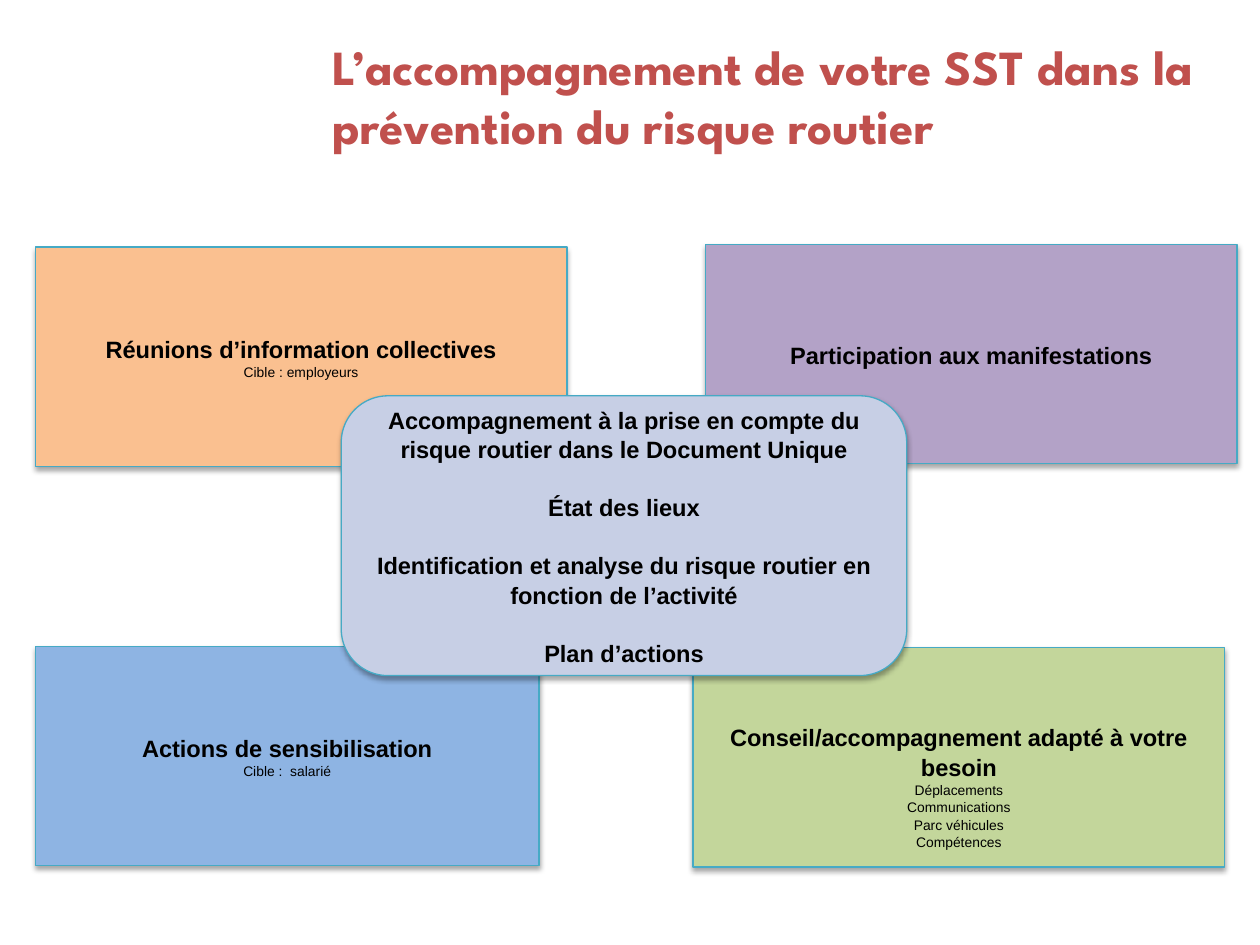
from lxml.etree import SubElement
from pptx import Presentation
from pptx.dml.color import RGBColor as Rgb
from pptx.enum.shapes import MSO_SHAPE as Shape
from pptx.enum.text import MSO_ANCHOR as Anchor, PP_ALIGN as Align
from pptx.oxml.ns import qn
from pptx.util import Cm, Pt

COLORS = {
    "title": "C0504D",
    "text": "000000",
    "border": "46AAC5",
    "meetings": "FAC090",
    "events": "B3A2C7",
    "awareness": "8EB4E3",
    "advice": "C3D69B",
    "support": "C7CFE5",
}


def write(frame, text, *, size, first=False, bold=False, color="text",
          font="Arial", align=Align.CENTER, before=0, spacing=1.05):
    """Write one formatted paragraph into a text frame."""
    paragraph = frame.paragraphs[0] if first else frame.add_paragraph()
    paragraph.alignment = align
    paragraph.line_spacing = spacing
    if before:
        paragraph.space_before = Pt(before)
    run = paragraph.add_run()
    run.text = text
    run.font.name = font
    run.font.size = Pt(size)
    run.font.bold = bold
    run.font.color.rgb = Rgb.from_string(COLORS[color])


class Deck:
    """Hold the style and the current slide."""

    heading_size = 13.5
    detail_size = 7.9
    title_font = "League Spartan"

    def __init__(self):
        self.presentation = Presentation()
        self.presentation.slide_width = Cm(25.4)
        self.presentation.slide_height = Cm(19.05)
        self.slide = self.presentation.slides.add_slide(
            self.presentation.slide_layouts[6])

    def title(self, text, left, top, width, height):
        box = self.slide.shapes.add_textbox(
            Cm(left), Cm(top), Cm(width), Cm(height))
        frame = box.text_frame
        frame.word_wrap = True
        frame.vertical_anchor = Anchor.MIDDLE
        frame.margin_left = frame.margin_right = 0
        frame.margin_top = frame.margin_bottom = 0
        write(frame, text, size=28, first=True, bold=True, color="title",
              font=self.title_font, align=Align.LEFT, spacing=1)

    def shadow(self, panel):
        panel.shadow.inherit = False
        effects = panel._element.spPr.find(qn("a:effectLst"))
        outer = SubElement(effects, qn("a:outerShdw"), blurRad=str(Pt(3.1)),
                           dist=str(Pt(1.8)), dir="5400000", rotWithShape="0")
        tint = SubElement(outer, qn("a:srgbClr"), val="000000")
        SubElement(tint, qn("a:alpha"), val="35000")

    def panel(self, color, left, top, width, height, headings, details=(),
              shape=Shape.RECTANGLE, gap=0, top_inset=0.13):
        panel = self.slide.shapes.add_shape(
            shape, Cm(left), Cm(top), Cm(width), Cm(height))
        panel.fill.solid()
        panel.fill.fore_color.rgb = Rgb.from_string(COLORS[color])
        panel.line.color.rgb = Rgb.from_string(COLORS["border"])
        panel.line.width = Pt(0.75)
        self.shadow(panel)
        frame = panel.text_frame
        frame.word_wrap = True
        frame.vertical_anchor = Anchor.MIDDLE
        frame.margin_top = Cm(top_inset)
        for index, heading in enumerate(headings):
            write(frame, heading, size=self.heading_size, bold=True,
                  first=index == 0, before=gap if index else 0)
        for detail in details:
            write(frame, detail, size=self.detail_size)


def main():
    deck = Deck()
    deck.title("L’accompagnement de votre SST dans la prévention du risque routier",
               6.71, 0.33, 18.69, 3.18)
    wide, high = 10.72, 4.42
    deck.panel("meetings", 0.71, 4.98, wide, high,
               ["Réunions d’information collectives"], ["Cible : employeurs"])
    deck.panel("events", 14.22, 4.93, wide, high,
               ["Participation aux manifestations"])
    deck.panel("awareness", 0.71, 13.03, 10.16, high,
               ["Actions de sensibilisation"], ["Cible :  salarié"])
    deck.panel("advice", 13.97, 13.06, wide, high,
               ["Conseil/accompagnement adapté à votre besoin"],
               ["Déplacements", "Communications", "Parc véhicules", "Compétences"],
               top_inset=1.27)
    deck.panel("support", 6.88, 7.98, 11.4, 5.64,
               ["Accompagnement à la prise en compte du risque routier dans le Document Unique",
                "État des lieux",
                "Identification et analyse du risque routier en fonction de l’activité",
                "Plan d’actions"],
               shape=Shape.ROUNDED_RECTANGLE, gap=16.2)
    deck.presentation.save("out.pptx")


if __name__ == "__main__":
    main()
